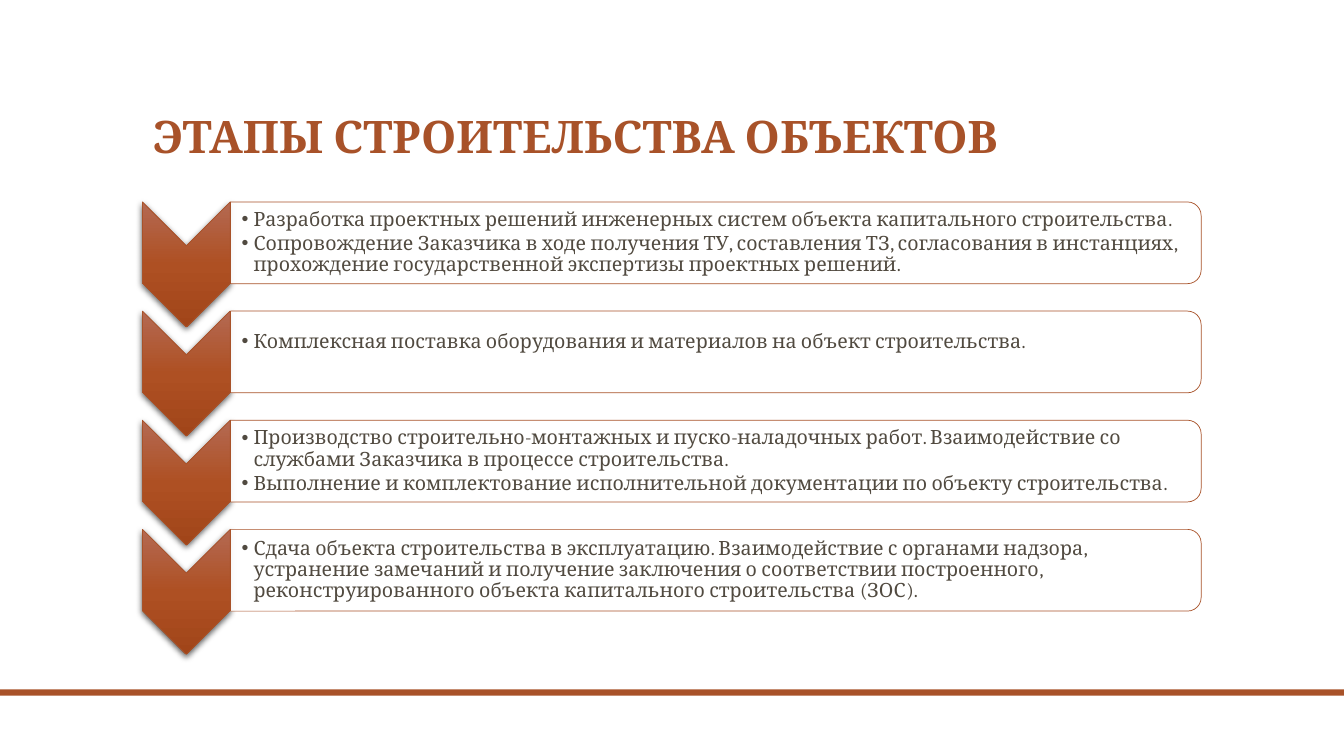
from lxml import etree
from pptx import Presentation
from pptx.dml.color import RGBColor
from pptx.enum.shapes import MSO_SHAPE
from pptx.enum.text import MSO_ANCHOR, MSO_AUTO_SIZE, PP_ALIGN
from pptx.oxml import parse_xml
from pptx.oxml.ns import qn
from pptx.util import Cm, Pt

BAR, CHEVRON = MSO_SHAPE.RECTANGLE, MSO_SHAPE.CHEVRON
PANEL = MSO_SHAPE.ROUND_2_SAME_RECTANGLE
MIDDLE, BOTTOM = MSO_ANCHOR.MIDDLE, MSO_ANCHOR.BOTTOM
LEFT, NO_FIT = PP_ALIGN.LEFT, MSO_AUTO_SIZE.NONE
COMPARISON_LAYOUT = 4

FONT = "Cambria"
COLORS = {"accent": "A85229", "text": "514A40", "panel": "FFFFFF"}
CHEVRON_STOPS = {0: "B46952", 50: "AE5023", 100: "A14519"}
DRAWING = 'xmlns:a="http://schemas.openxmlformats.org/drawingml/2006/main"'

FIRST_TOP, STEP = 5.09, 2.75
CHEVRON_LEFT, CHEVRON_WIDTH, CHEVRON_HEIGHT = 3.59, 2.21, 3.15
PANEL_LEFT, PANEL_WIDTH, PANEL_HEIGHT = 5.81, 24.46, 2.06

# Each stage: its list items and the space kept free below them, in cm.
STAGES = [
    (["Разработка проектных решений инженерных систем объекта капитального строительства.",
      "Сопровождение Заказчика в ходе получения ТУ, составления ТЗ, согласования в "
      "инстанциях, прохождение государственной экспертизы проектных решений."], 0.03),
    (["Комплексная поставка оборудования и материалов на объект строительства."], 0.55),
    (["Производство строительно-монтажных и пуско-наладочных работ. Взаимодействие со "
      "службами Заказчика в процессе строительства.",
      "Выполнение и комплектование исполнительной документации по объекту "
      "строительства."], 0.03),
    (["Сдача объекта строительства в эксплуатацию. Взаимодействие с органами надзора, "
      "устранение замечаний и получение заключения о соответствии построенного, "
      "реконструированного объекта капитального строительства (ЗОС)."], 0.03),
]


def color(name):
    return RGBColor.from_string(COLORS[name])


def place(box, left, top, width, height):
    box.left, box.top, box.width, box.height = Cm(left), Cm(top), Cm(width), Cm(height)


def add_turned_shape(page, kind, left, top, width, height):
    """Add an outlined shape turned by 90 degrees; the frame is as seen after the turn."""
    shift = (width - height) / 2
    shape = page.shapes.add_shape(kind, Cm(left + shift), Cm(top - shift),
                                  Cm(height), Cm(width))
    shape.rotation = 90
    shape.shadow.inherit = False
    shape.line.color.rgb = color("accent")
    shape.line.width = Pt(0.5)
    return shape


def add_chevron(page, top):
    shape = add_turned_shape(page, CHEVRON, CHEVRON_LEFT, top, CHEVRON_WIDTH, CHEVRON_HEIGHT)
    stops = "".join(f'<a:gs pos="{place * 1000}"><a:srgbClr val="{value}"/></a:gs>'
                    for place, value in CHEVRON_STOPS.items())
    properties = shape._element.spPr
    properties.find(qn("a:prstGeom")).addnext(parse_xml(
        f'<a:gradFill {DRAWING} rotWithShape="0"><a:gsLst>{stops}</a:gsLst>'
        '<a:lin ang="5400000" scaled="0"/></a:gradFill>'))
    properties.find(qn("a:effectLst")).append(parse_xml(
        f'<a:outerShdw {DRAWING} blurRad="57150" dist="19050" dir="5400000" '
        'algn="ctr" rotWithShape="0"><a:srgbClr val="000000"><a:alpha val="63000"/>'
        '</a:srgbClr></a:outerShdw>'))


def add_panel(page, top):
    shape = add_turned_shape(page, PANEL, PANEL_LEFT, top, PANEL_WIDTH, PANEL_HEIGHT)
    shape.fill.solid()
    shape.fill.fore_color.rgb = color("panel")
    fill = shape._element.spPr.find(qn("a:solidFill"))
    etree.SubElement(fill[0], qn("a:alpha"), val="90000")


def add_bullet(para):
    properties = para._p.get_or_add_pPr()
    properties.set("marL", str(Cm(0.3)))
    properties.set("indent", str(-Cm(0.3)))
    etree.SubElement(properties, qn("a:buChar"), char="•")


def fill_list(page, box, top, items, space_below):
    place(box, PANEL_LEFT, top + 0.1, PANEL_WIDTH - 0.1, PANEL_HEIGHT - 0.2)
    page.shapes._spTree.append(box._element)  # bring in front of the panel
    frame = box.text_frame
    frame.text = "\n".join(items)
    frame.word_wrap = True
    frame.auto_size = NO_FIT
    frame.vertical_anchor = MIDDLE
    frame.margin_left = Cm(0.28)
    frame.margin_top = frame.margin_right = Cm(0.03)
    frame.margin_bottom = Cm(space_below)
    for para in frame.paragraphs:
        add_bullet(para)
        para.alignment = LEFT
        para.line_spacing = 0.9
        para.space_before = Pt(0)
        para.space_after = Pt(2)
        set_font(para, 14, "text", False)


def set_font(para, size, name, bold):
    para.font.name = FONT
    para.font.size = Pt(size)
    para.font.bold = bold
    para.font.color.rgb = color(name)


def fill_title(title, text):
    place(title, 3.6, 1.07, 26.67, 3.17)
    frame = title.text_frame
    frame.text = text
    frame.word_wrap = True
    frame.auto_size = NO_FIT
    frame.vertical_anchor = BOTTOM
    para = frame.paragraphs[0]
    para.alignment = LEFT
    para.line_spacing = 0.9
    set_font(para, 32, "accent", True)


def add_footer_bar(page, width):
    bar = page.shapes.add_shape(BAR, 0, Cm(17.37), width, Cm(0.16))
    bar.shadow.inherit = False
    bar.fill.solid()
    bar.fill.fore_color.rgb = color("accent")
    bar.line.fill.background()


def main():
    deck = Presentation()
    deck.slide_width, deck.slide_height = Cm(33.87), Cm(19.05)
    page = deck.slides.add_slide(deck.slide_layouts[COMPARISON_LAYOUT])
    title, *lists = list(page.placeholders)

    add_footer_bar(page, deck.slide_width)
    fill_title(title, "ЭТАПЫ СТРОИТЕЛЬСТВА ОБЪЕКТОВ")
    for index, (box, (items, space_below)) in enumerate(zip(lists, STAGES)):
        top = FIRST_TOP + index * STEP
        add_chevron(page, top)
        add_panel(page, top)
        fill_list(page, box, top, items, space_below)
    deck.save("out.pptx")


if __name__ == "__main__":
    main()
